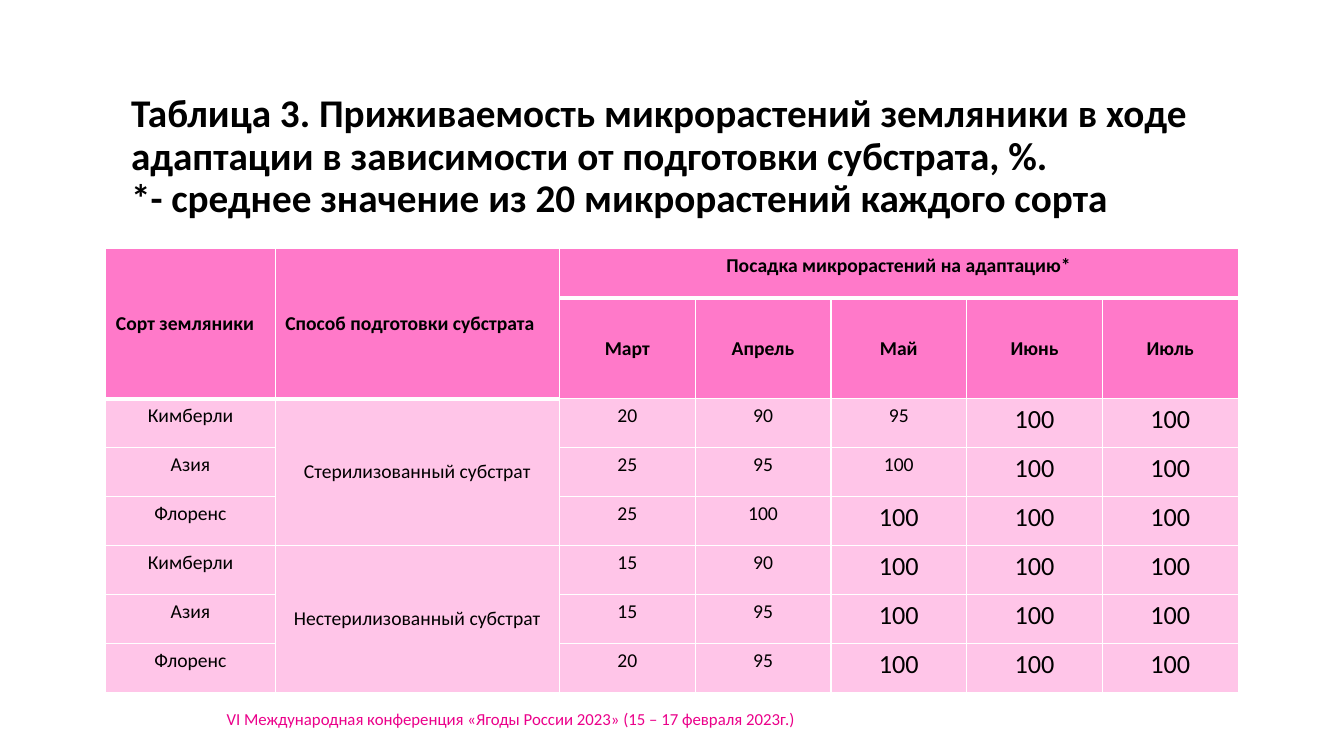
"""Build the slide with the survival table of strawberry microplants."""
from dataclasses import dataclass

from lxml.etree import SubElement
from pptx import Presentation
from pptx.dml.color import RGBColor
from pptx.enum.text import MSO_ANCHOR, MSO_AUTO_SIZE, PP_ALIGN
from pptx.oxml.ns import qn
from pptx.slide import Slide
from pptx.table import Table, _Cell
from pptx.text.text import _Paragraph
from pptx.util import Pt


@dataclass(frozen=True)
class Theme:
    font: str = "Calibri"
    ink: str = "000000"
    accent: str = "EB008A"
    head: str = "FF79C9"
    body: str = "FFC5E8"
    rule: str = "FFFFFF"
    title: float = 28
    text: float = 14
    large: float = 18.7
    foot: float = 12
    thin: float = 1
    thick: float = 3


@dataclass(frozen=True)
class Trial:
    sort: str
    rates: tuple[int, ...]
    small: int


@dataclass(frozen=True)
class Group:
    method: str
    trials: tuple[Trial, ...]


THEME = Theme()
TITLE = (
    "Таблица 3. Приживаемость микрорастений земляники в ходе адаптации "
    "в зависимости от подготовки субстрата, %.",
    "*- среднее значение из 20 микрорастений каждого сорта",
)
FOOTER = "VI Международная конференция «Ягоды России 2023» (15 – 17 февраля 2023г.)"
LABELS = ("Сорт земляники", "Способ подготовки субстрата")
PLANTING = "Посадка микрорастений на адаптацию*"
MONTHS = ("Март", "Апрель", "Май", "Июнь", "Июль")
GROUPS = (
    Group("Стерилизованный субстрат", (
        Trial("Кимберли", (20, 90, 95, 100, 100), 3),
        Trial("Азия", (25, 95, 100, 100, 100), 3),
        Trial("Флоренс", (25, 100, 100, 100, 100), 2),
    )),
    Group("Нестерилизованный субстрат", (
        Trial("Кимберли", (15, 90, 100, 100, 100), 2),
        Trial("Азия", (15, 95, 100, 100, 100), 2),
        Trial("Флоренс", (20, 95, 100, 100, 100), 2),
    )),
)
WIDTHS = (121, 203) + (97,) * len(MONTHS)
HEIGHTS = (35, 72) + (35,) * sum(len(group.trials) for group in GROUPS)


def add_run(para: _Paragraph, text: str, size: float, color: str = THEME.ink,
            bold: bool = False) -> None:
    run = para.add_run()
    run.text = text
    run.font.name = THEME.font
    run.font.size = Pt(size)
    run.font.bold = bold
    run.font.color.rgb = RGBColor.from_string(color)


def add_title(slide: Slide) -> None:
    shape = slide.shapes.title
    shape.left, shape.top, shape.width, shape.height = Pt(75.6), Pt(63.4), Pt(884), Pt(120)
    frame = shape.text_frame
    frame.word_wrap = True
    frame.auto_size = MSO_AUTO_SIZE.NONE
    frame.vertical_anchor = MSO_ANCHOR.TOP
    para = frame.paragraphs[0]
    para.alignment = PP_ALIGN.LEFT
    para.line_spacing = 0.9
    para.space_before = Pt(0)
    props = para._p.get_or_add_pPr()
    props.set("marL", str(Pt(10.8)))
    props.set("indent", "0")
    for index, line in enumerate(TITLE):
        if index:
            para.add_line_break()
        add_run(para, line, THEME.title, bold=True)


def add_footer(slide: Slide) -> None:
    box = slide.shapes.add_textbox(Pt(154.8), Pt(502.6), Pt(480), Pt(21.6))
    box.text_frame.word_wrap = True
    add_run(box.text_frame.paragraphs[0], FOOTER, THEME.foot, THEME.accent)


def add_edge(cell: _Cell, side: str, width: float) -> None:
    line = SubElement(cell._tc.get_or_add_tcPr(), qn(f"a:{side}"), w=str(Pt(width)))
    fill = SubElement(line, qn("a:solidFill"))
    SubElement(fill, qn("a:srgbClr"), val=THEME.rule)


def base_width(row: int, col: int) -> float:
    return THEME.thick if row == 0 or (row == 1 and col < len(LABELS)) else THEME.thin


def style_grid(table: Table) -> None:
    for row in range(len(HEIGHTS)):
        for col in range(len(WIDTHS)):
            cell = table.cell(row, col)
            add_edge(cell, "lnL", THEME.thin)
            add_edge(cell, "lnR", THEME.thin)
            add_edge(cell, "lnT", base_width(row - 1, col))
            add_edge(cell, "lnB", base_width(row, col))
            cell.fill.solid()
            cell.fill.fore_color.rgb = RGBColor.from_string(
                THEME.head if row < 2 else THEME.body)


def put(cell: _Cell, text: str, size: float = THEME.text, bold: bool = False,
        middle: bool = False, align: PP_ALIGN = PP_ALIGN.CENTER) -> None:
    cell.vertical_anchor = MSO_ANCHOR.MIDDLE if middle else MSO_ANCHOR.TOP
    para = cell.text_frame.paragraphs[0]
    para.alignment = align
    add_run(para, text, size, bold=bold)


def fill_head(table: Table) -> None:
    first = len(LABELS)
    for col, label in enumerate(LABELS):
        table.cell(0, col).merge(table.cell(1, col))
        put(table.cell(0, col), label, bold=True, middle=True, align=PP_ALIGN.LEFT)
    table.cell(0, first).merge(table.cell(0, len(WIDTHS) - 1))
    put(table.cell(0, first), PLANTING, bold=True)
    for col, month in enumerate(MONTHS, first):
        put(table.cell(1, col), month, bold=True, middle=True)


def fill_body(table: Table) -> None:
    row = 2
    for group in GROUPS:
        table.cell(row, 1).merge(table.cell(row + len(group.trials) - 1, 1))
        put(table.cell(row, 1), group.method, middle=True)
        for trial in group.trials:
            put(table.cell(row, 0), trial.sort)
            for index, rate in enumerate(trial.rates):
                size = THEME.text if index < trial.small else THEME.large
                put(table.cell(row, len(LABELS) + index), str(rate), size)
            row += 1


def add_grid(slide: Slide) -> None:
    table = slide.shapes.add_table(
        len(HEIGHTS), len(WIDTHS), Pt(75.6), Pt(177.8),
        Pt(sum(WIDTHS)), Pt(sum(HEIGHTS))).table
    table.first_row = False
    table.horz_banding = False
    for column, width in zip(table.columns, WIDTHS):
        column.width = Pt(width)
    for row, height in zip(table.rows, HEIGHTS):
        row.height = Pt(height)
    style_grid(table)
    fill_head(table)
    fill_body(table)


def main() -> None:
    deck = Presentation()
    deck.slide_width, deck.slide_height = Pt(960), Pt(540)
    slide = deck.slides.add_slide(deck.slide_layouts[5])
    add_footer(slide)
    add_title(slide)
    add_grid(slide)
    deck.save("out.pptx")


if __name__ == "__main__":
    main()
